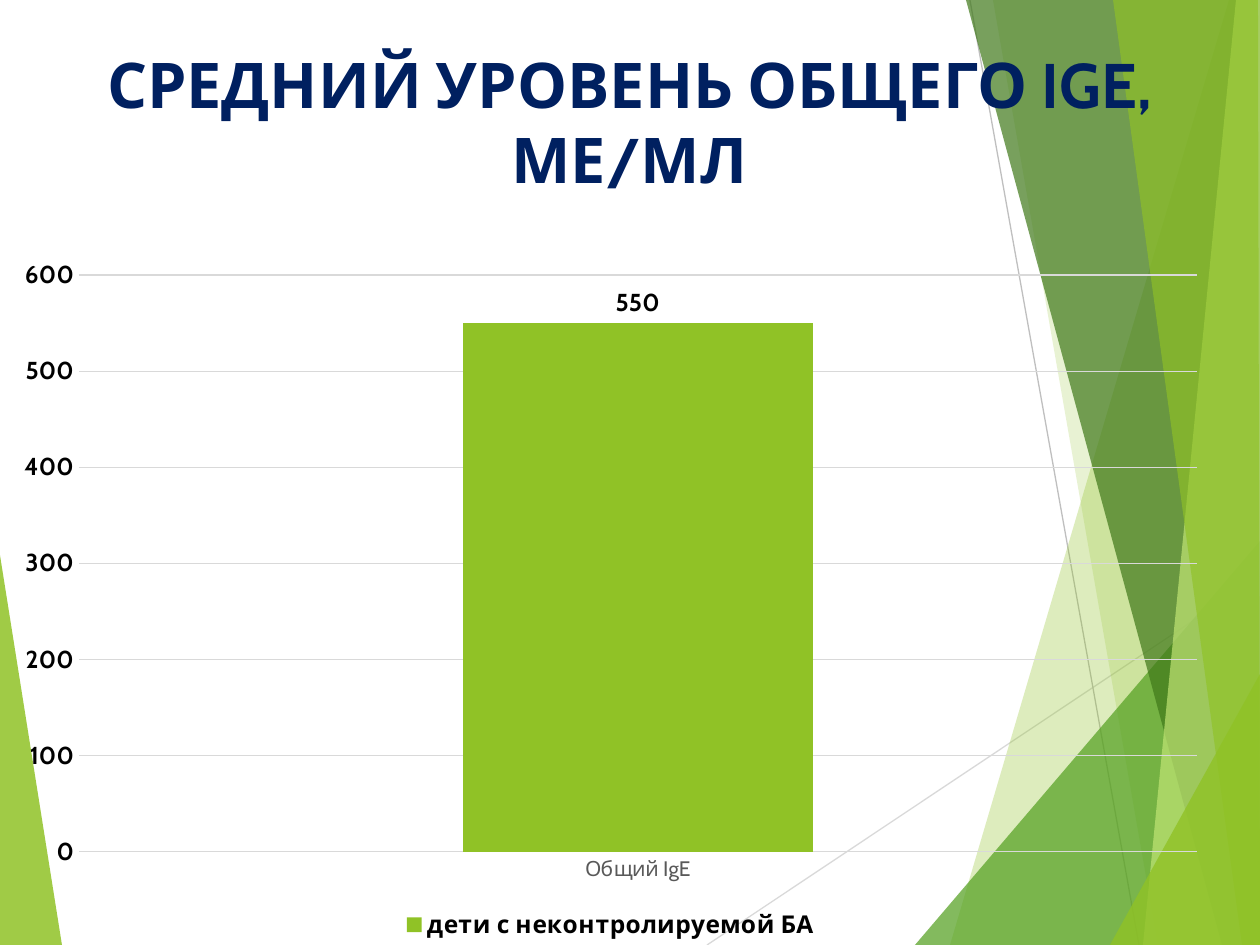
from typing import NamedTuple

from lxml.etree import SubElement
from pptx import Presentation
from pptx.chart.data import CategoryChartData
from pptx.dml.color import RGBColor
from pptx.enum.chart import XL_CHART_TYPE as ChartType
from pptx.enum.chart import XL_LABEL_POSITION as LabelPosition
from pptx.enum.chart import XL_LEGEND_POSITION as LegendPosition
from pptx.enum.chart import XL_TICK_MARK as TickMark
from pptx.enum.shapes import MSO_CONNECTOR as Connector
from pptx.enum.text import MSO_ANCHOR as Anchor
from pptx.enum.text import PP_ALIGN as Align
from pptx.oxml.ns import qn
from pptx.slide import Slide
from pptx.util import Emu, Pt

SCALE = 914400 / 126  # EMU per px
WIDTH, HEIGHT = 1260, 945
FONT = "Cabin"

BLACK = RGBColor(0x00, 0x00, 0x00)
NAVY = RGBColor(0x00, 0x20, 0x60)
GRAY_TEXT = RGBColor(0x59, 0x59, 0x59)
GRAY_LINE = RGBColor(0xBF, 0xBF, 0xBF)
LIGHT_LINE = RGBColor(0xD9, 0xD9, 0xD9)
LIME = RGBColor(0x90, 0xC2, 0x26)
PALE_LIME = RGBColor(0xC0, 0xE4, 0x74)
GREEN = RGBColor(0x54, 0xA0, 0x21)
DARK_GREEN = RGBColor(0x3F, 0x78, 0x19)

Point = tuple[int, int]


class Facet(NamedTuple):
    points: list[Point]
    color: RGBColor
    opacity: int  # percent


class Ray(NamedTuple):
    start: Point
    end: Point
    color: RGBColor


def right_band(top: int, bottom: int, color: RGBColor, opacity: int) -> Facet:
    """A full-height facet from a slanted edge to the right slide edge."""
    points = [(top, 0), (bottom, HEIGHT), (WIDTH, HEIGHT), (WIDTH, 0)]
    return Facet(points, color, opacity)


def right_corner(left: int, top: int, color: RGBColor, opacity: int) -> Facet:
    """A triangle in the bottom right corner."""
    return Facet([(left, HEIGHT), (WIDTH, top), (WIDTH, HEIGHT)], color, opacity)


BACKDROP = [
    Facet([(0, 555), (62, HEIGHT), (0, HEIGHT)], LIME, 85),
    Ray((707, HEIGHT), (WIDTH, 576), LIGHT_LINE),
    Ray((970, 0), (1139, HEIGHT), GRAY_LINE),
    right_band(1229, 950, LIME, 30),
    right_band(993, 1158, LIME, 20),
    right_corner(915, 541, GREEN, 72),
    right_band(966, 1222, DARK_GREEN, 70),
    right_band(1236, 1143, PALE_LIME, 70),
    Facet([(1113, 0), (1242, HEIGHT), (WIDTH, HEIGHT), (1258, 0)], LIME, 65),
    right_corner(1110, 674, LIME, 80),
]


def px(length: int) -> Emu:
    return Emu(round(length * SCALE))


def draw_facet(slide: Slide, facet: Facet) -> None:
    builder = slide.shapes.build_freeform(*facet.points[0], scale=SCALE)
    builder.add_line_segments(facet.points[1:], close=True)
    shape = builder.convert_to_shape()
    shape.shadow.inherit = False
    shape.line.fill.background()
    shape.fill.solid()
    shape.fill.fore_color.rgb = facet.color
    color_element = shape.element.spPr.find(f"{qn('a:solidFill')}/{qn('a:srgbClr')}")
    SubElement(color_element, qn("a:alpha"), val=str(facet.opacity * 1000))


def draw_ray(slide: Slide, ray: Ray) -> None:
    ends = [px(value) for value in ray.start + ray.end]
    connector = slide.shapes.add_connector(Connector.STRAIGHT, *ends)
    connector.line.color.rgb = ray.color
    connector.line.width = Pt(0.75)
    SubElement(connector.element.spPr, qn("a:effectLst"))


def style_font(font, size: int, color: RGBColor, bold: bool = False) -> None:
    font.name = FONT
    font.size = Pt(size)
    font.bold = bold
    font.color.rgb = color


def style_line(line) -> None:
    line.color.rgb = LIGHT_LINE
    line.width = Pt(0.75)


def place_title(slide: Slide) -> None:
    title = slide.shapes.title
    title.left, title.top, title.width, title.height = map(px, (29, 39, 1201, 227))
    slide.shapes.element.append(title.element)  # in front of the facets
    frame = title.text_frame
    frame.text = "СРЕДНИЙ УРОВЕНЬ ОБЩЕГО IGE, МЕ/МЛ"
    frame.word_wrap = True
    frame.vertical_anchor = Anchor.TOP
    paragraph = frame.paragraphs[0]
    paragraph.alignment = Align.CENTER
    style_font(paragraph.font, 36, NAVY, bold=True)


def draw_chart(slide: Slide) -> None:
    data = CategoryChartData()
    data.categories = ["Общий IgE"]
    data.add_series("дети с неконтролируемой БА", [550])
    chart = slide.shapes.add_chart(
        ChartType.COLUMN_CLUSTERED, *map(px, (0, 246, 1221, 699)), data
    ).chart
    style_font(chart.font, 10, BLACK)
    chart.has_title = False

    # Legend
    chart.has_legend = True
    chart.legend.position = LegendPosition.BOTTOM
    chart.legend.include_in_layout = False
    style_font(chart.legend.font, 14, BLACK, bold=True)

    # Axes
    category_axis, value_axis = chart.category_axis, chart.value_axis
    for axis in (category_axis, value_axis):
        axis.major_tick_mark = axis.minor_tick_mark = TickMark.NONE
    style_font(category_axis.tick_labels.font, 12, GRAY_TEXT)
    style_line(category_axis.format.line)
    style_font(value_axis.tick_labels.font, 14, BLACK, bold=True)
    value_axis.format.line.fill.background()
    value_axis.minimum_scale, value_axis.maximum_scale = 0, 600
    value_axis.major_unit = 100
    value_axis.has_major_gridlines = True
    style_line(value_axis.major_gridlines.format.line)

    # Column and its value
    plot = chart.plots[0]
    plot.vary_by_categories = False
    plot.gap_width, plot.overlap = 219, -27
    series = plot.series[0]
    series.format.fill.solid()
    series.format.fill.fore_color.rgb = LIME
    labels = series.data_labels
    labels.show_value = True
    labels.position = LabelPosition.OUTSIDE_END
    style_font(labels.font, 14, BLACK, bold=True)


def main() -> None:
    presentation = Presentation()
    presentation.slide_width, presentation.slide_height = px(WIDTH), px(HEIGHT)
    slide = presentation.slides.add_slide(presentation.slide_layouts[5])
    for part in BACKDROP:
        if isinstance(part, Facet):
            draw_facet(slide, part)
        else:
            draw_ray(slide, part)
    place_title(slide)
    draw_chart(slide)
    presentation.save("out.pptx")


if __name__ == "__main__":
    main()
